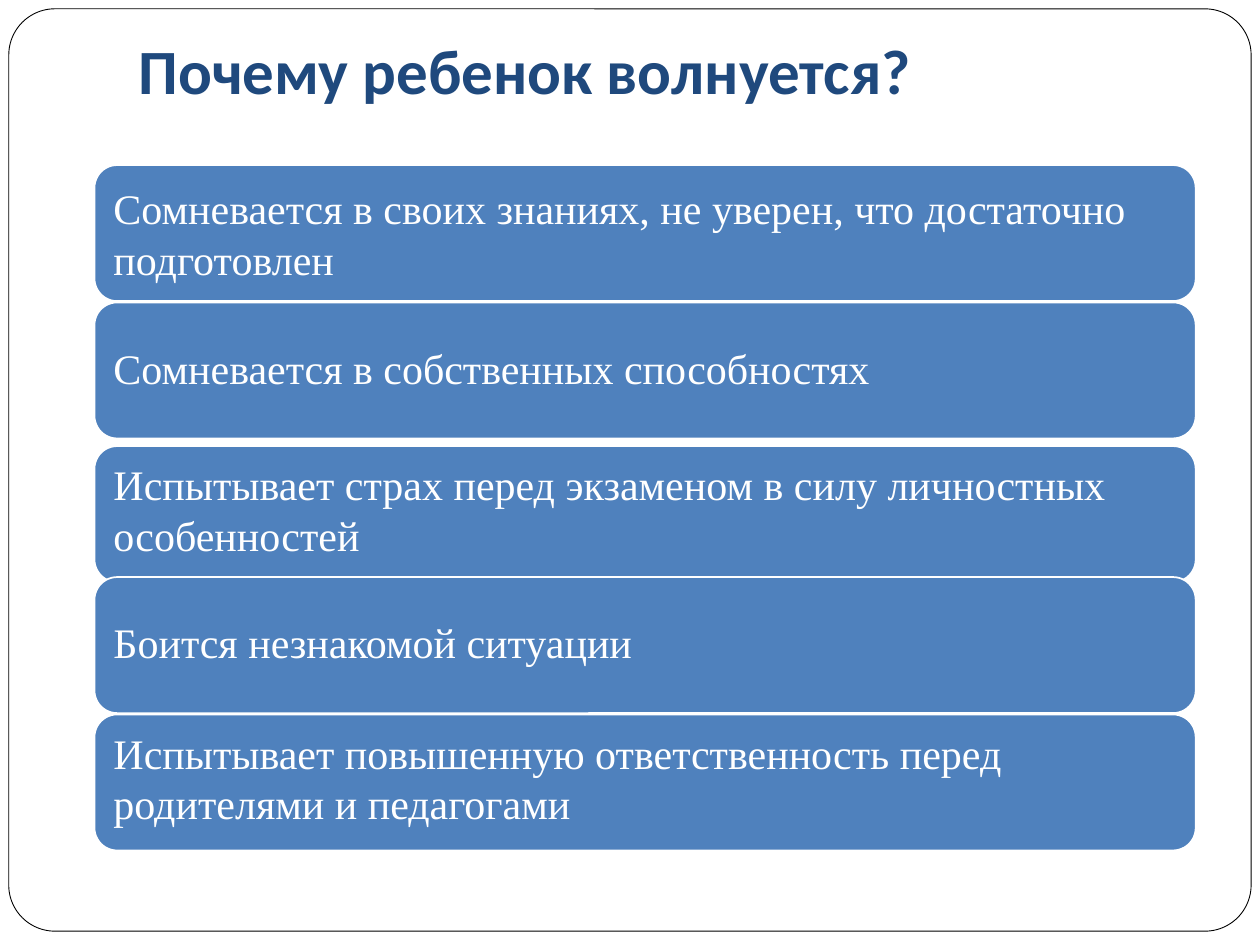
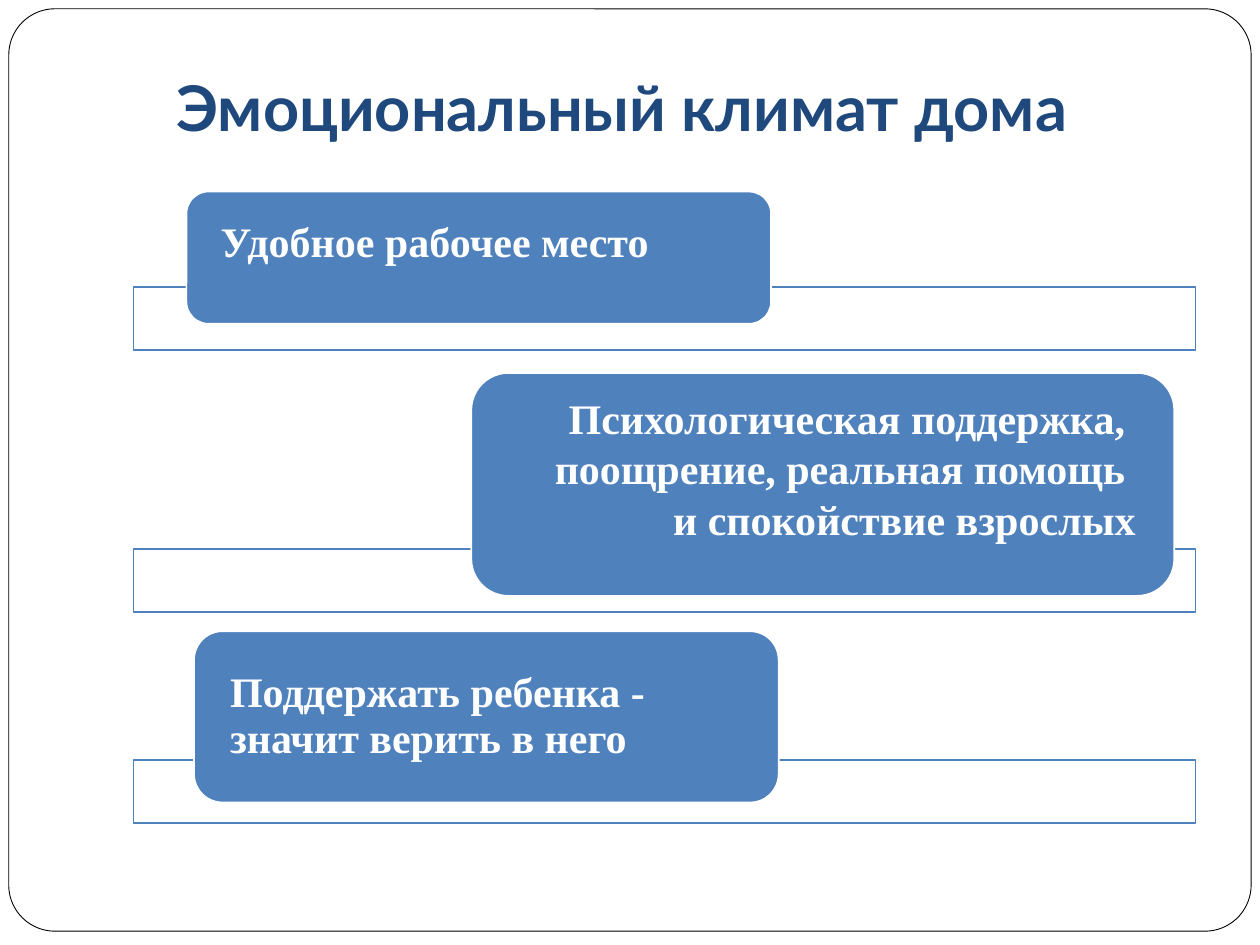
from lxml import etree
from pptx import Presentation
from pptx.dml.color import RGBColor
from pptx.enum import shapes, text
from pptx.oxml import ns
from pptx.util import Inches, Pt

WHITE, BLACK, NAVY, BLUE = "FFFFFF", "000000", "1F497D", "4F81BD"
BODY_FONT = "Times New Roman"
LEFT, RIGHT = text.PP_ALIGN.LEFT, text.PP_ALIGN.RIGHT
ROUNDED = shapes.MSO_SHAPE.ROUNDED_RECTANGLE
RECTANGLE = shapes.MSO_SHAPE.RECTANGLE


def colour(hex_code):
    return RGBColor.from_string(hex_code)


def apply(target, formats):
    for name, value in formats.items():
        setattr(target, name, value)


def add_box(page, kind, box, fill, line, width=1):
    """Filled and outlined shape without a shadow."""
    shape = page.shapes.add_shape(kind, *map(Inches, box))
    shape.shadow.inherit = False
    shape.fill.solid()
    shape.fill.fore_color.rgb = colour(fill)
    shape.line.color.rgb = colour(line)
    shape.line.width = Pt(width)
    return shape


def set_text(shape, lines, font, anchor, insets, align=LEFT, spacing=1.0):
    """Write one paragraph per line; insets run left, top, right, bottom."""
    frame = shape.text_frame
    sides = ("margin_left", "margin_top", "margin_right", "margin_bottom")
    apply(frame, dict(zip(sides, map(Inches, insets))))
    apply(frame, {"word_wrap": True, "vertical_anchor": anchor,
                  "auto_size": text.MSO_AUTO_SIZE.NONE})
    frame.text = "\n".join(lines)
    for para in frame.paragraphs:
        apply(para, {"alignment": align, "line_spacing": spacing})
        for span in para.runs:
            apply(span.font, {key: font[key] for key in ("name", "size", "bold")})
            span.font.color.rgb = colour(font["colour"])


def prepare_template(deck, kept_layout):
    """Keep one layout, and only the title among its placeholders."""
    for layout in list(deck.slide_layouts):
        if layout is not kept_layout and layout.name != kept_layout.name:
            deck.slide_layouts.remove(layout)
    title_type = shapes.PP_PLACEHOLDER.TITLE
    for level in (deck.slide_master, kept_layout):
        for holder in list(level.placeholders):
            if holder.placeholder_format.type != title_type:
                holder.element.getparent().remove(holder.element)


def add_frame(deck, page):
    """Rounded page border, kept on the master so every slide shows it."""
    border = add_box(page, ROUNDED, (0.07, 0.07, 9.86, 7.32), WHITE, BLACK, 0.5)
    border.adjustments[0] = 0.05
    border.element.nvSpPr.cNvPr.set("id", "99")
    deck.slide_master.shapes._spTree.insert(2, border.element)


def add_title(page, box, wording, font_name, bottom_inset):
    title = page.shapes.title
    apply(title, dict(zip(("left", "top", "width", "height"), map(Inches, box))))
    font = {"name": font_name, "size": Pt(36), "bold": True, "colour": NAVY}
    set_text(title, [wording], font, text.MSO_ANCHOR.BOTTOM,
             (0.1, 0.05, 0.1, bottom_inset))


def add_card(page, box, lines, insets, bold=False, **layout):
    card = add_box(page, ROUNDED, box, BLUE, WHITE)
    font = {"name": BODY_FONT, "size": Pt(24), "bold": bold, "colour": WHITE}
    set_text(card, lines, font, text.MSO_ANCHOR.MIDDLE, insets, **layout)


def add_reason_list(page, box, reasons):
    """Stack of equal cards; each reason has a nudge, a bottom inset, a spacing."""
    left, top, width, height = box
    step = 1.09
    card_height = height - step * (len(reasons) - 1)
    for row, (wording, nudge, bottom, spacing) in enumerate(reasons):
        add_card(page, (left, top + step * row + nudge, width, card_height),
                 [wording], (0.1, 0.1, 0.1, bottom), spacing=spacing)


def add_support_step(page, bar_box, card_box, lines, bottom=0, **layout):
    """Thin outlined bar with a card over it; card_box is relative to the bar."""
    bar = add_box(page, RECTANGLE, bar_box, WHITE, BLUE)
    fill_colour = bar.element.spPr.find(".//" + ns.qn("a:srgbClr"))
    etree.SubElement(fill_colour, ns.qn("a:alpha"), val="90000")
    x, y, width, height = card_box
    add_card(page, (bar_box[0] + x, bar_box[1] + y, width, height), lines,
             (0.22, 0, 0.22, bottom), bold=True, **layout)


def build_reasons(page):
    add_title(page, (1, 0.3, 8.5, 1.25), "Почему ребенок волнуется?", "Calibri", 0.7)
    add_reason_list(page, (0.75, 1.31, 8.74, 5.44), [
        ("Сомневается в своих знаниях, не уверен, что достаточно подготовлен",
         0, 0.1, 1.0),
        ("Сомневается в собственных способностях", 0, 0.1, 0.9),
        ("Испытывает страх перед экзаменом в силу личностных особенностей",
         0.05, 0.18, 1.0),
        ("Боится незнакомой ситуации", 0, 0.1, 0.9),
        ("Испытывает повышенную ответственность перед родителями и педагогами",
         0, 0.18, 1.0),
    ])


def build_home_climate(page):
    add_title(page, (1.3, 0.84, 8.5, 1.01), "Эмоциональный климат дома", "Lato", 0.71)
    steps = [
        (2.28, (0.42, -0.76, 4.64, 1.05), ["Удобное рабочее место"],
         {"bottom": 0.27}),
        (4.36, (2.68, -1.4, 5.58, 1.77),
         ["Психологическая поддержка, ", "поощрение, реальная помощь ",
          "и спокойствие взрослых"], {"bottom": 0.26, "align": RIGHT}),
        (6.03, (0.48, -1.02, 4.64, 1.36),
         ["Поддержать ребенка - значит верить в него"], {"spacing": 0.9}),
    ]
    for top, card_box, lines, layout in steps:
        add_support_step(page, (1.06, top, 8.43, 0.5), card_box, lines, **layout)


def main():
    deck = Presentation()
    apply(deck, {"slide_width": Inches(10), "slide_height": Inches(7.5)})
    title_only = deck.slide_layouts.get_by_name("Title Only")
    prepare_template(deck, title_only)
    pages = [deck.slides.add_slide(title_only) for _ in range(2)]
    add_frame(deck, pages[0])
    build_reasons(pages[0])
    build_home_climate(pages[1])
    deck.save("out.pptx")


if __name__ == "__main__":
    main()
